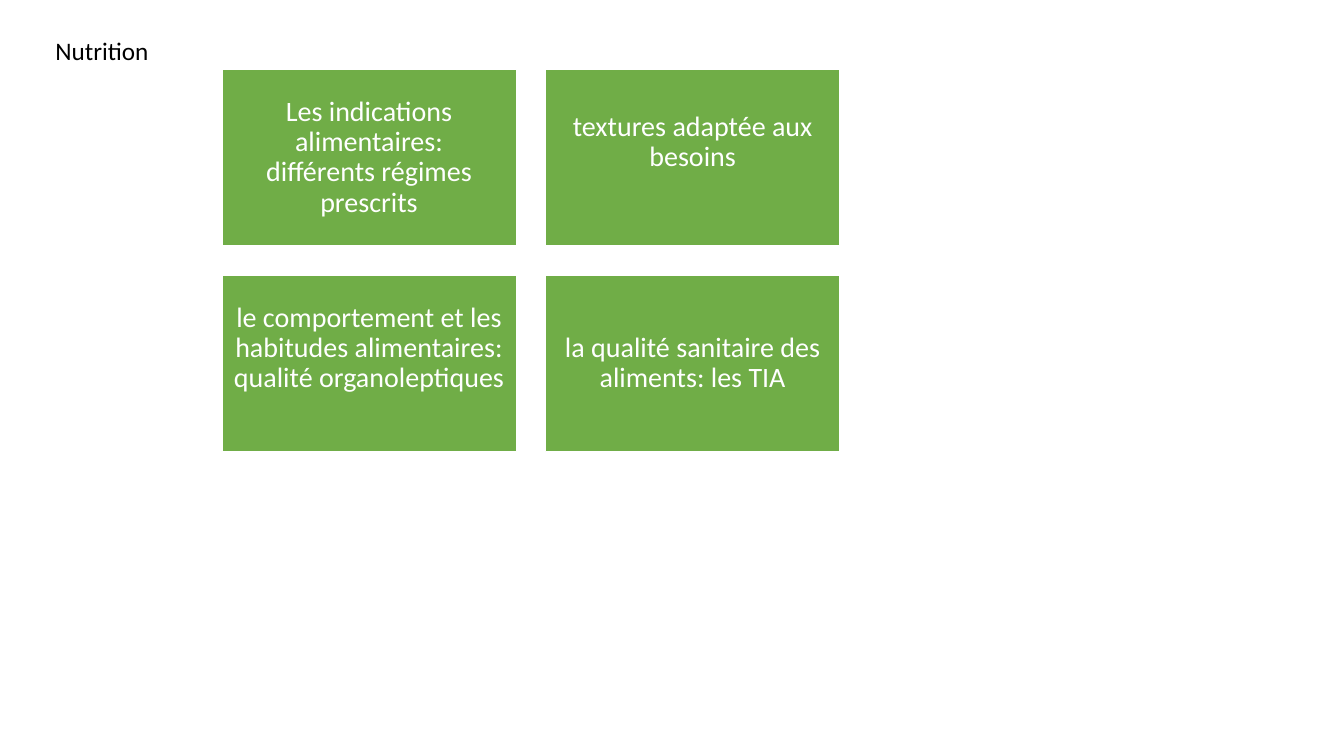
from pptx import Presentation
from pptx.dml.color import RGBColor
from pptx.enum.shapes import MSO_SHAPE
from pptx.enum.text import MSO_ANCHOR, MSO_AUTO_SIZE, PP_ALIGN
from pptx.util import Inches, Pt

# Content: each topic has its lines and the space kept free below them (inches)
HEADING = "Nutrition"
TOPICS = [
    (["Les indications alimentaires:", "différents régimes prescrits"], 0),
    (["textures adaptée aux besoins"], 0.3),
    (["le comportement et les habitudes alimentaires: qualité organoleptiques"], 0.3),
    (["la qualité sanitaire des aliments: les TIA"], 0),
]
COLORS = {"card": "70AD47", "white": "FFFFFF", "heading": "000000"}
FONT = "Calibri"

# Grid, in inches
COLUMNS = 2
LEFT, TOP = 2.2, 0.69
CARD_W, CARD_H = 2.92, 1.75
GAP = 0.29
INSET = 0.08


def color(name):
    return RGBColor.from_string(COLORS[name])


def add_run(paragraph, text, size, color_name):
    run = paragraph.add_run()
    run.text = text
    run.font.name = FONT
    run.font.size = Pt(size)
    run.font.color.rgb = color(color_name)


def add_card(slide, index, lines, space_below):
    row, column = divmod(index, COLUMNS)
    card = slide.shapes.add_shape(
        MSO_SHAPE.RECTANGLE,
        Inches(LEFT + column * (CARD_W + GAP)),
        Inches(TOP + row * (CARD_H + GAP)),
        Inches(CARD_W), Inches(CARD_H))
    card.shadow.inherit = False
    card.fill.solid()
    card.fill.fore_color.rgb = color("card")
    card.line.color.rgb = color("white")
    card.line.width = Pt(1)

    frame = card.text_frame
    frame.word_wrap = True
    frame.vertical_anchor = MSO_ANCHOR.MIDDLE
    frame.margin_left = frame.margin_right = frame.margin_top = Inches(INSET)
    frame.margin_bottom = Inches(INSET + space_below)
    paragraph = frame.paragraphs[0]
    paragraph.alignment = PP_ALIGN.CENTER
    paragraph.line_spacing = 0.9
    for number, line in enumerate(lines):
        if number:
            paragraph.add_line_break()
        add_run(paragraph, line, 20, "white")


def main():
    deck = Presentation()
    deck.slide_width, deck.slide_height = Inches(13.33), Inches(7.5)
    slide = deck.slides.add_slide(deck.slide_layouts[5])

    # Heading
    heading = slide.shapes.title
    heading.left, heading.top = Inches(0.45), Inches(0.3)
    heading.width, heading.height = Inches(1.75), Inches(0.4)
    frame = heading.text_frame
    frame.auto_size = MSO_AUTO_SIZE.NONE
    frame.word_wrap = True
    frame.vertical_anchor = MSO_ANCHOR.TOP
    frame.paragraphs[0].alignment = PP_ALIGN.LEFT
    add_run(frame.paragraphs[0], HEADING, 18, "heading")

    # Topic cards
    for index, (lines, space_below) in enumerate(TOPICS):
        add_card(slide, index, lines, space_below)

    deck.save("out.pptx")


if __name__ == "__main__":
    main()
